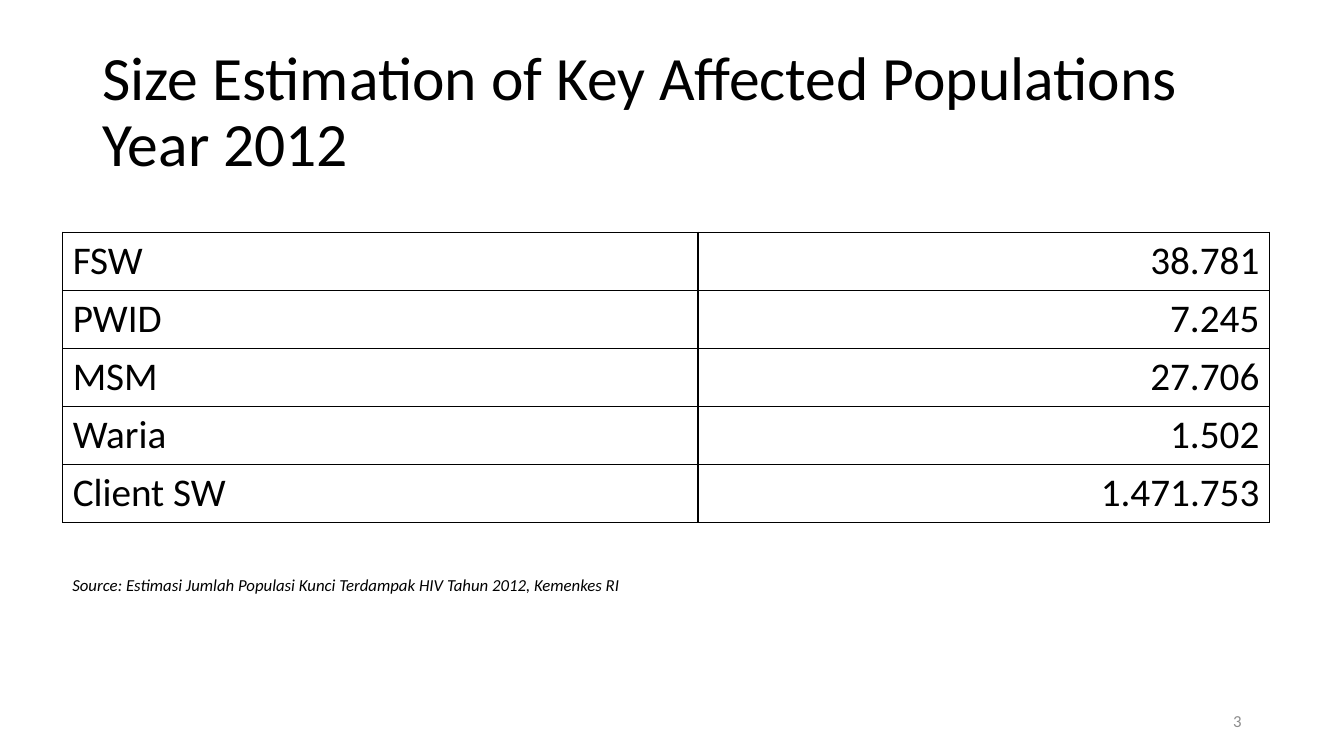
from lxml.etree import SubElement
from pptx import Presentation
from pptx.dml.color import RGBColor
from pptx.enum.text import MSO_ANCHOR as ANCHOR, PP_ALIGN as ALIGN
from pptx.oxml.ns import qn
from pptx.util import Pt

COLORS = {"text": "000000", "border": "000000", "number": "8C8C8C"}
FONT = "Calibri"

populations = [
    ("FSW", "38.781"),
    ("PWID", "7.245"),
    ("MSM", "27.706"),
    ("Waria", "1.502"),
    ("Client SW", "1.471.753"),
]


def write(tf, text, size, color="text", align=ALIGN.LEFT, italic=False, spacing=1.0):
    p = tf.paragraphs[0]
    p.text = text
    p.alignment = align
    p.line_spacing = spacing
    for r in p.runs:
        r.font.name = FONT
        r.font.size = Pt(size)
        r.font.italic = italic
        r.font.color.rgb = RGBColor.from_string(COLORS[color])


def add_borders(cell, width):
    tcPr = cell._tc.get_or_add_tcPr()
    for side in ("lnL", "lnR", "lnT", "lnB"):
        ln = SubElement(tcPr, qn(f"a:{side}"), w=str(Pt(width)))
        fill = SubElement(ln, qn("a:solidFill"))
        SubElement(fill, qn("a:srgbClr"), val=COLORS["border"])


prs = Presentation()
prs.slide_width, prs.slide_height = Pt(960), Pt(540)
s = prs.slides.add_slide(prs.slide_layouts[6])

# Title
tf = s.shapes.add_textbox(Pt(66), Pt(28.75), Pt(828), Pt(104.4)).text_frame
tf.word_wrap = True
tf.vertical_anchor = ANCHOR.MIDDLE
write(tf, "Size Estimation of Key Affected Populations\nYear 2012", 44, spacing=0.9)

# Population table
row_height = 41.5
table = s.shapes.add_table(
    len(populations), 2, Pt(44.8), Pt(165.8), Pt(862), Pt(row_height * len(populations))
).table
table.first_row = table.horz_banding = False
table.columns[0].width, table.columns[1].width = Pt(453.8), Pt(408.2)
for i, row in enumerate(populations):
    table.rows[i].height = Pt(row_height)
    for j, (text, align) in enumerate(zip(row, (ALIGN.LEFT, ALIGN.RIGHT))):
        cell = table.cell(i, j)
        add_borders(cell, 1)
        cell.fill.background()
        write(cell.text_frame, text, 28, align=align)

# Source note
tf = s.shapes.add_textbox(Pt(44.6), Pt(406.8), Pt(415.4), Pt(21.6)).text_frame
tf.word_wrap = False
write(tf, "Source: Estimasi Jumlah Populasi Kunci Terdampak HIV Tahun 2012, Kemenkes RI", 12, italic=True)

# Slide number
tf = s.shapes.add_textbox(Pt(678), Pt(500.5), Pt(216), Pt(28.75)).text_frame
tf.word_wrap = True
tf.vertical_anchor = ANCHOR.MIDDLE
write(tf, "3", 12, color="number", align=ALIGN.RIGHT)

prs.save("out.pptx")
